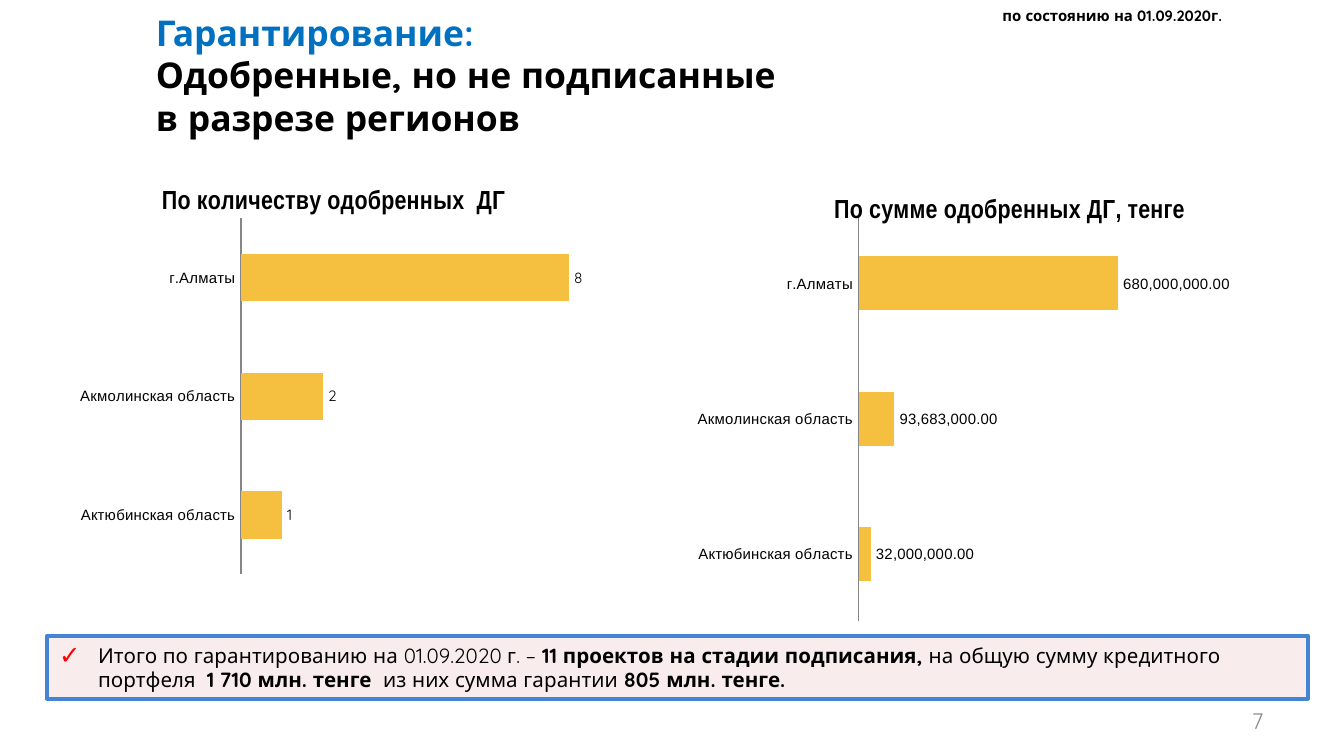
from lxml import etree
from pptx import Presentation
from pptx.chart.data import CategoryChartData
from pptx.dml.color import RGBColor
from pptx.enum.chart import XL_CHART_TYPE, XL_LABEL_POSITION, XL_TICK_MARK
from pptx.enum.shapes import MSO_SHAPE
from pptx.enum.text import MSO_ANCHOR, PP_ALIGN
from pptx.oxml.ns import qn
from pptx.util import Inches, Pt

BAR = XL_CHART_TYPE.BAR_CLUSTERED
OUTSIDE = XL_LABEL_POSITION.OUTSIDE_END
NO_TICK = XL_TICK_MARK.NONE
RECTANGLE = MSO_SHAPE.RECTANGLE
MIDDLE = MSO_ANCHOR.MIDDLE
LEFT, RIGHT = PP_ALIGN.LEFT, PP_ALIGN.RIGHT

FONT = "Quicksand"
BLACK, BLUE, GREY = "000000", "0070C0", "8C8C8C"
AMBER, AXIS_GREY = "F5C040", "868686"
PINK, BORDER, RED = "F2DCDB", "4584D3", "FF0000"

HEADING = [
    ("Гарантирование:", BLUE),
    ("Одобренные, но не подписанные", BLACK),
    ("в разрезе регионов", BLACK),
]
AS_OF = "по состоянию на 01.09.2020г."
PAGE = "7"
SUMMARY = [
    ("Итого по гарантированию на 01.09.2020 г. – ", False),
    ("11 проектов на стадии подписания, ", True),
    ("на общую сумму кредитного портфеля  ", False),
    ("1 710 млн. тенге  ", True),
    ("из них сумма гарантии ", False),
    ("805 млн. тенге.", True),
]
REGIONS = ["Актюбинская область", "Акмолинская область", "г.Алматы"]
CHARTS = [
    dict(title="По количеству одобренных  ДГ", values=[1, 2, 8], top_value=9,
         box=(0.28, 1.23, 4.45, 3.17), plot=(0.34, 0.125, 0.617, 0.835),
         title_at=(0.2, 0.04), label_font=FONT, label_format="General"),
    dict(title="По сумме одобренных ДГ, тенге",
         values=[32000000, 93683000, 680000000], top_value=800000000,
         box=(4.92, 1.35, 4.72, 3.56), plot=(0.311, 0.072, 0.481, 0.848),
         title_at=(0.265, 0.02), label_font="Arial", label_format="#,##0.00"),
]


def rgb(code):
    return RGBColor.from_string(code)


def style(font, size, name=FONT, color=BLACK, bold=False):
    font.size, font.name, font.bold = Pt(size), name, bold
    font.color.rgb = rgb(color)


def add_run(paragraph, text, *look, **options):
    run = paragraph.add_run()
    run.text = text
    style(run.font, *look, **options)


def inches(box):
    return [Inches(length) for length in box]


def add_label(slide, box, text, size, color, bold, align):
    frame = slide.shapes.add_textbox(*inches(box)).text_frame
    frame.word_wrap = True
    paragraph = frame.paragraphs[0]
    paragraph.alignment = align
    add_run(paragraph, text, size, color=color, bold=bold)
    return frame


def place(parent, index, inner, **shares):
    for old in parent.findall(qn("c:layout")):
        parent.remove(old)
    layout = etree.Element(qn("c:layout"))
    manual = etree.SubElement(layout, qn("c:manualLayout"))
    settings = [("layoutTarget", "inner")] if inner else []
    settings += [("xMode", "edge"), ("yMode", "edge"), *shares.items()]
    for tag, value in settings:
        etree.SubElement(manual, qn("c:" + tag)).set("val", str(value))
    parent.insert(index, layout)


def add_bars(slide, title, values, top_value, box, plot, title_at,
             label_font, label_format):
    data = CategoryChartData()
    data.categories = REGIONS
    data.add_series("Series 1", values)
    chart = slide.shapes.add_chart(BAR, *inches(box), data).chart
    style(chart.font, 10)
    chart.has_legend = False
    chart.has_title = True
    add_run(chart.chart_title.text_frame.paragraphs[0], title, 14,
            "Arial Narrow", bold=True)
    x, y = title_at
    place(chart.chart_title._element, 1, False, x=x, y=y)
    x, y, w, h = plot
    place(chart._chartSpace.chart.plotArea, 0, True, x=x, y=y, w=w, h=h)

    regions, amounts = chart.category_axis, chart.value_axis
    regions.major_tick_mark = regions.minor_tick_mark = NO_TICK
    regions.has_major_gridlines = amounts.has_major_gridlines = False
    regions.format.line.color.rgb = rgb(AXIS_GREY)
    style(regions.tick_labels.font, 8, "Arial")
    amounts.minimum_scale, amounts.maximum_scale = 0, top_value
    amounts.visible = False

    bars = chart.plots[0]
    bars.gap_width = 150
    bars.vary_by_categories = False
    fill = bars.series[0].format.fill
    fill.solid()
    fill.fore_color.rgb = rgb(AMBER)
    bars.has_data_labels = True
    labels = bars.data_labels
    labels.show_value = True
    labels.position = OUTSIDE
    labels.number_format = label_format
    labels.number_format_is_linked = False
    style(labels.font, 8, label_font)


def add_heading(slide):
    title = slide.shapes.title
    title.left, title.top, title.width, title.height = inches((1.06, 0.37, 9, 0.69))
    frame = title.text_frame
    frame.vertical_anchor = MIDDLE
    frame.margin_bottom = Inches(0.37)
    paragraph = frame.paragraphs[0]
    paragraph.alignment = LEFT
    for number, (line, color) in enumerate(HEADING):
        if number:
            paragraph.add_line_break()
        add_run(paragraph, line, 19, color=color, bold=True)


def add_summary(slide):
    panel = slide.shapes.add_shape(RECTANGLE, *inches((0.35, 4.73, 9.38, 0.47)))
    panel.shadow.inherit = False
    panel.fill.solid()
    panel.fill.fore_color.rgb = rgb(PINK)
    tint = panel._element.spPr.find(qn("a:solidFill"))[0]
    etree.SubElement(tint, qn("a:alpha")).set("val", "50000")
    panel.line.color.rgb = rgb(BORDER)
    panel.line.width = Pt(2)
    frame = panel.text_frame
    frame.word_wrap = True
    frame.vertical_anchor = MIDDLE
    frame.margin_left = frame.margin_right = Inches(0.08)
    frame.margin_top = frame.margin_bottom = Inches(0.04)
    paragraph = frame.paragraphs[0]
    paragraph.alignment = LEFT
    paragraph.space_after = Pt(6)
    properties = paragraph._p.get_or_add_pPr()
    properties.set("marL", str(Inches(0.3)))
    properties.set("indent", str(Inches(-0.29)))
    bullet_color = etree.SubElement(properties, qn("a:buClr"))
    etree.SubElement(bullet_color, qn("a:srgbClr")).set("val", RED)
    etree.SubElement(properties, qn("a:buSzPct")).set("val", "125000")
    etree.SubElement(properties, qn("a:buFont")).set("typeface", FONT)
    etree.SubElement(properties, qn("a:buChar")).set("char", "✓")
    for text, bold in SUMMARY:
        add_run(paragraph, text, 11, bold=bold)


def main():
    deck = Presentation()
    deck.slide_width = Inches(10)
    deck.slide_height = deck.slide_width * 9 // 16
    slide = deck.slides.add_slide(deck.slide_layouts[5])
    page = add_label(slide, (7.17, 5.21, 2.33, 0.3), PAGE, 12, GREY, False, RIGHT)
    page.vertical_anchor = MIDDLE
    add_heading(slide)
    add_label(slide, (7.36, 0, 2.28, 0.24), AS_OF, 8, BLACK, True, LEFT)
    add_summary(slide)
    for chart in CHARTS:
        add_bars(slide, **chart)
    deck.save("out.pptx")


if __name__ == "__main__":
    main()
